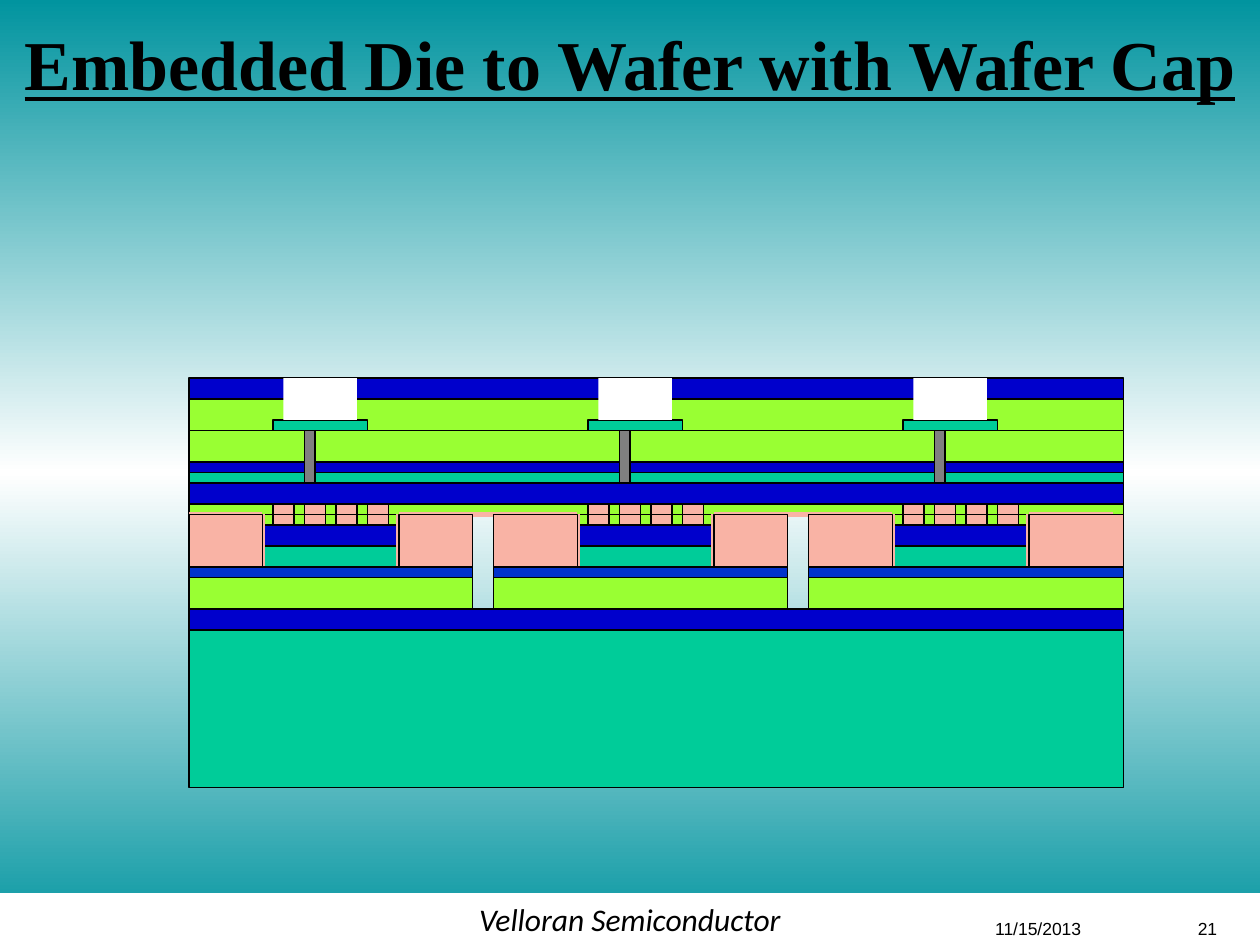
from copy import deepcopy

from lxml.etree import SubElement
from pptx import Presentation
from pptx.dml.color import RGBColor
from pptx.enum.shapes import MSO_CONNECTOR, MSO_SHAPE
from pptx.enum.text import MSO_ANCHOR, PP_ALIGN
from pptx.oxml.ns import qn
from pptx.util import Pt

PX = 7620
PITCH = 300
DIES = 3
BLACK = RGBColor(0x00, 0x00, 0x00)
WHITE = RGBColor(0xFF, 0xFF, 0xFF)
TEAL = RGBColor(0x01, 0x94, 0x9F)
LIME = RGBColor(0x99, 0xFF, 0x33)
GREEN = RGBColor(0x00, 0xCC, 0x99)
NAVY = RGBColor(0x00, 0x00, 0xCC)
BLUE = RGBColor(0x00, 0x33, 0xCC)
GRAY = RGBColor(0x80, 0x80, 0x80)
PINK = RGBColor(0xF9, 0xB3, 0xA5)


def add_rect(s, x, y, w, h, fill, line=BLACK):
    """Add a filled rectangle, outlined unless line is None."""
    sp = s.shapes.add_shape(MSO_SHAPE.RECTANGLE, x * PX, y * PX, w * PX, h * PX)
    sp.shadow.inherit = False
    sp.fill.solid()
    sp.fill.fore_color.rgb = fill
    if line is None:
        sp.line.fill.background()
    else:
        sp.line.color.rgb = line
        sp.line.width = Pt(0.75)
    return sp


def add_bond_line(s, x1, y1, x2, y2):
    """Add a thick pink line along a bonded edge."""
    ln = s.shapes.add_connector(
        MSO_CONNECTOR.STRAIGHT, x1 * PX, y1 * PX, x2 * PX, y2 * PX)
    ln.line.color.rgb = PINK
    ln.line.width = Pt(3)
    SubElement(ln._element.spPr, qn("a:effectLst"))


def set_text(sp, text, font, size, align, bold=False, italic=False, underline=False):
    """Write one middle-anchored paragraph into a shape."""
    tf = sp.text_frame
    tf.word_wrap = True
    tf.vertical_anchor = MSO_ANCHOR.MIDDLE
    p = tf.paragraphs[0]
    p.text = text
    p.alignment = align
    p.font.name = font
    p.font.size = Pt(size)
    p.font.bold = bold
    p.font.italic = italic
    p.font.underline = underline
    p.font.color.rgb = BLACK


def add_background(s):
    """Fill the slide with a vertical teal, white, teal gradient."""
    fill = s.background.fill
    fill.gradient()
    fill.gradient_angle = 90
    for stop, color, position in zip(fill.gradient_stops, (TEAL, WHITE), (0, 0.5)):
        stop.color.rgb = color
        stop.position = position
    stops = s.element.find(".//" + qn("a:gsLst"))
    last = deepcopy(stops[0])
    last.set("pos", "100000")
    stops.append(last)


def add_title(s, x, y, w, h):
    """Add the slide title."""
    box = s.shapes.add_textbox(x * PX, y * PX, w * PX, h * PX)
    set_text(box, "Embedded Die to Wafer with Wafer Cap", "Times New Roman", 40,
             PP_ALIGN.CENTER, bold=True, underline=True)


def add_footer(s, x, y, w, h):
    """Add the white footer band with company, date and page number."""
    band = add_rect(s, x, y, w, h, WHITE, WHITE)
    set_text(band, "Velloran Semiconductor", "Calibri", 18, PP_ALIGN.CENTER, italic=True)
    box = s.shapes.add_textbox((x + 936) * PX, (y + 17) * PX, 264 * PX, 32 * PX)
    tabs = SubElement(box.text_frame.paragraphs[0]._p.get_or_add_pPr(), qn("a:tabLst"))
    SubElement(tabs, qn("a:tab"), pos=str(193 * PX), algn="l")
    set_text(box, "11/15/2013\t21", "Arial", 10, PP_ALIGN.LEFT)


def add_cap(s, x, y, w):
    """Add the wafer cap: layers, then a via, pad and opening over each die."""
    layers = ((120, 10, LIME), (20, 30, LIME), (50, 30, LIME), (80, 20, GREEN),
              (100, 20, NAVY), (80, 10, NAVY), (0, 20, NAVY))
    for dy, h, color in layers:
        add_rect(s, x, y + dy, w, h, color)
    for i in range(DIES):
        left = x + 80 + i * PITCH
        add_rect(s, left + 30, y + 50, 10, 50, GRAY)
        add_rect(s, left, y + 40, 90, 10, GREEN)
        add_rect(s, left + 10, y, 70, 40, WHITE, None)


def add_die(s, x, y, w):
    """Add one embedded die with two rows of bumps and bonded sides."""
    add_rect(s, x, y, w, 10, LIME)
    add_rect(s, x, y + 10, w, 20, NAVY)
    for dy in (-10, 0):
        for i in range(4):
            add_rect(s, x + 10 + i * 30, y + dy, 20, 10, PINK)
    add_rect(s, x, y + 30, w, 20, GREEN)
    for side in (x, x + w):
        add_bond_line(s, side, y, side, y + 50)


def add_island(s, x, y, w, die_x, die_w):
    """Add one wafer island with mold blocks on both sides of its die."""
    die_right = die_x + die_w
    add_rect(s, x, y, die_x - x, 50, PINK)
    add_rect(s, die_right, y, x + w - die_right, 50, PINK)
    add_rect(s, x, y + 50, w, 10, BLUE)
    add_rect(s, x, y + 60, w, 30, LIME)


def add_base(s, x, y, w):
    """Add the base wafer with its top metal layer."""
    add_rect(s, x, y + 10, w, 160, GREEN)
    add_rect(s, x, y, w, 20, NAVY)


def add_stack(s, x, y, w):
    """Add the whole wafer cross-section from cap to base."""
    die_w, top = 130, y + 130
    dies = [x + 70 + i * PITCH for i in range(DIES)]
    starts = [x] + [x + 290 + i * PITCH for i in range(DIES - 1)]
    ends = [start - 20 for start in starts[1:]] + [x + w]
    add_cap(s, x, y, w)
    for left, right in zip([x] + [d + die_w for d in dies], dies + [x + w - 10]):
        add_bond_line(s, left, top, right, top)
    for die_x in dies:
        add_die(s, die_x, top, die_w)
    for start, end, die_x in zip(starts, ends, dies):
        add_island(s, start, top, end - start, die_x, die_w)
    add_base(s, x, y + 220, w)


def main():
    """Build and save the slide."""
    prs = Presentation()
    prs.slide_width, prs.slide_height = 1200 * PX, 900 * PX
    s = prs.slides.add_slide(prs.slide_layouts[6])
    add_background(s)
    add_footer(s, 0, 851, 1200, 49)
    add_stack(s, 180, 360, 890)
    add_title(s, 0, 0, 1200, 120)
    prs.save("out.pptx")


if __name__ == "__main__":
    main()
